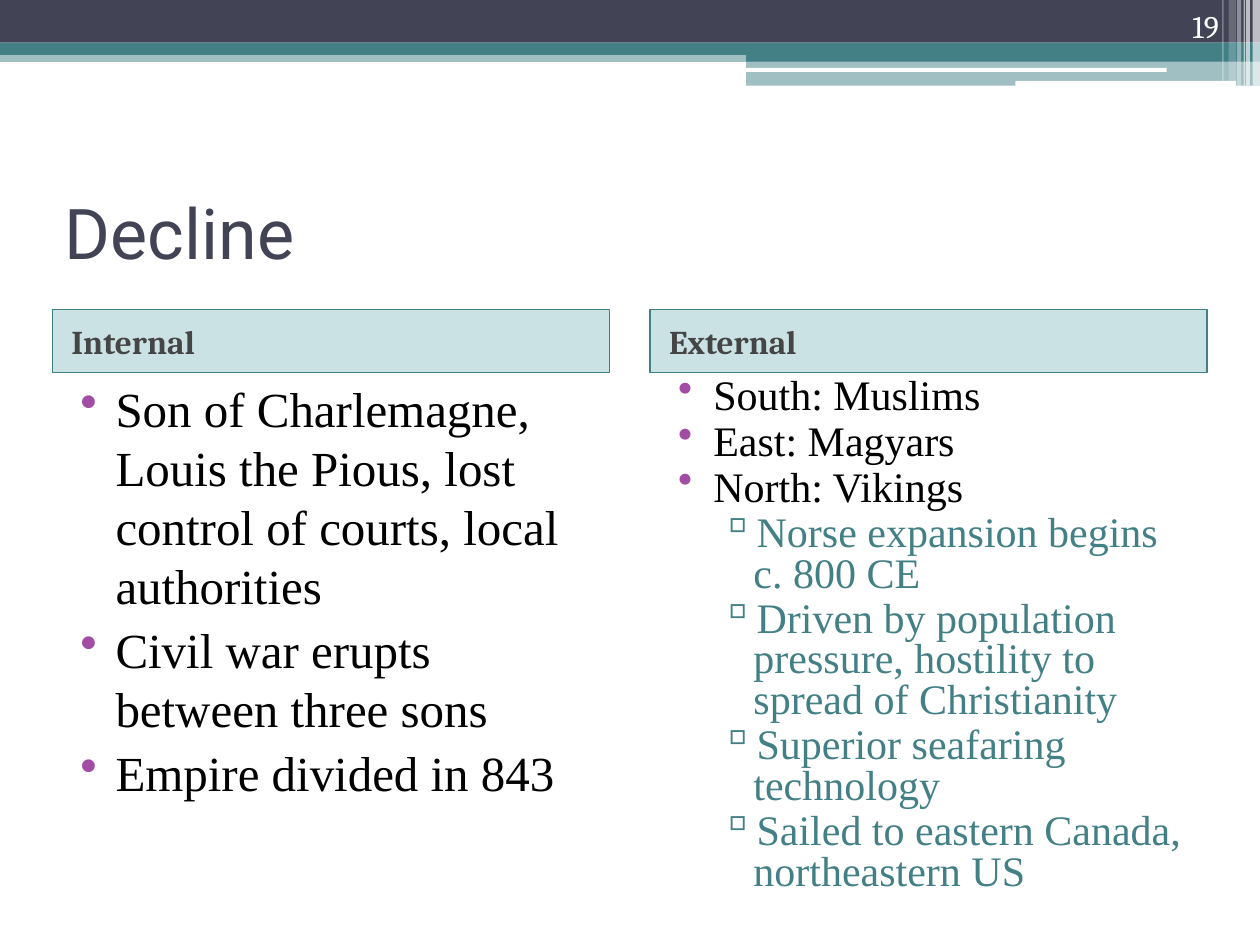
from dataclasses import dataclass

from lxml import etree
from pptx import Presentation
from pptx import util as u
from pptx.dml import color
from pptx.enum import shapes, text
from pptx.oxml import ns


@dataclass(frozen=True)
class Theme:
    navy: str = "424456"
    teal: str = "438086"
    header_fill: str = "328E97"
    header_text: str = "454545"
    purple: str = "A04DA3"
    white: str = "FFFFFF"
    black: str = "000000"
    heading_font: str = "Roboto"
    label_font: str = "Cambria"
    body_font: str = "Times New Roman"
    title_size: int = 40
    header_size: int = 19
    number_size: int = 18
    internal_size: int = 28
    external_size: int = 24


THEME = Theme()
RECT = shapes.MSO_SHAPE.RECTANGLE
ROUND = shapes.MSO_SHAPE.ROUNDED_RECTANGLE
LEVELS = (
    ("•", THEME.purple, THEME.black, 1.02, -0.71),
    ("▫", THEME.teal, THEME.teal, 1.83, -0.69),
)


def rgb(value):
    return color.RGBColor.from_string(value)


def add_bar(slide, box, fill, opacity=100, preset=RECT):
    bar = slide.shapes.add_shape(preset, *map(u.Cm, box))
    bar.shadow.inherit = False
    bar.fill.solid()
    bar.fill.fore_color.rgb = rgb(fill)
    bar.line.fill.background()
    if opacity < 100:
        tint = bar.fill._xPr.find(".//" + ns.qn("a:srgbClr"))
        etree.SubElement(tint, ns.qn("a:alpha"), val=str(opacity * 1000))
    return bar


def add_text_box(slide, box, anchor):
    holder = slide.shapes.add_textbox(*map(u.Cm, box))
    holder.text_frame.word_wrap = True
    holder.text_frame.vertical_anchor = anchor
    return holder.text_frame


def add_run(paragraph, wording, font, size, ink, bold=False):
    run = paragraph.add_run()
    run.text = wording
    run.font.name = font
    run.font.size = u.Pt(size)
    run.font.color.rgb = rgb(ink)
    run.font.bold = bold


def set_indent(paragraph, margin, hanging=0):
    properties = paragraph._p.get_or_add_pPr()
    properties.set("marL", str(u.Cm(margin)))
    properties.set("indent", str(u.Cm(hanging)))
    return properties


def set_bullet(paragraph, level):
    mark, mark_color, _, margin, hanging = LEVELS[level]
    paragraph.level = level
    properties = set_indent(paragraph, margin, hanging)
    tint = etree.SubElement(properties, ns.qn("a:buClr"))
    etree.SubElement(tint, ns.qn("a:srgbClr"), val=mark_color)
    etree.SubElement(properties, ns.qn("a:buChar"), char=mark)


def add_banner(slide, box, number):
    left, top, width, _ = box
    right = left + width
    step = left + 15.04
    step_width = right - step

    add_bar(slide, (left, top + 1.02, width, 0.23), THEME.teal, 50)
    add_bar(slide, (left, top, width, 0.86), THEME.navy)
    add_bar(slide, (left, top + 0.86, width, 0.25), THEME.teal)
    add_bar(slide, (step, top + 0.99, step_width, 0.25), THEME.teal)
    add_bar(slide, (step, top + 1.22, step_width, 0.51), THEME.teal, 50)
    add_bar(slide, (step - 0.03, top + 1.37, 8.51, 0.08), THEME.white, preset=ROUND)
    add_bar(slide, (right - 4.93, top + 1.63, 4.45, 0.1), THEME.white, preset=ROUND)

    stripes = (
        (0.15, 0.15, 1.73, 65),
        (0.28, 0.08, 1.73, 65),
        (0.33, 0.03, 1.73, 60),
        (0.46, 0.08, 1.73, 40),
        (0.63, 0.15, 1.63, 20),
        (0.76, 0.03, 1.63, 30),
    )
    for from_right, stripe_width, height, opacity in stripes:
        stripe = (right - from_right, top, stripe_width, height)
        add_bar(slide, stripe, THEME.white, opacity)

    frame = add_text_box(slide, (right - 2.69, top, 2.11, 1.02), text.MSO_ANCHOR.BOTTOM)
    page = frame.paragraphs[0]
    page.alignment = text.PP_ALIGN.RIGHT
    add_run(page, number, THEME.label_font, THEME.number_size, THEME.white)


def add_title(slide, box, wording):
    frame = add_text_box(slide, box, text.MSO_ANCHOR.MIDDLE)
    add_run(frame.paragraphs[0], wording, THEME.heading_font, THEME.title_size, THEME.navy)


def add_column(slide, box, heading, points, size, spacing=None):
    left, top, width, height = box
    header_height = 1.27

    header = add_bar(slide, (left, top, width, header_height), THEME.header_fill, 25)
    header.line.color.rgb = rgb(THEME.teal)
    header.line.width = u.Pt(1)
    header.text_frame.vertical_anchor = text.MSO_ANCHOR.MIDDLE
    label = header.text_frame.paragraphs[0]
    label.alignment = text.PP_ALIGN.LEFT
    label.space_before = u.Pt(3)
    set_indent(label, 0.13)
    add_run(label, heading, THEME.label_font, THEME.header_size, THEME.header_text, True)

    body = (left, top + header_height, width, height - header_height)
    frame = add_text_box(slide, body, text.MSO_ANCHOR.TOP)
    for index, (level, wording) in enumerate(points):
        point = frame.add_paragraph() if index else frame.paragraphs[0]
        point.space_before = u.Pt(3)
        if spacing:
            point.line_spacing = spacing
        set_bullet(point, level)
        add_run(point, wording, THEME.body_font, size, LEVELS[level][2])


def main():
    deck = Presentation()
    deck.slide_width, deck.slide_height = u.Cm(25.4), u.Cm(19.05)
    slide = deck.slides.add_slide(deck.slide_layouts[6])

    margin, column_width, column_top, column_height = 1.06, 11.23, 6.24, 12.07
    external_left = 25.4 - margin - column_width
    internal = (
        (0, "Son of Charlemagne, Louis the Pious, lost control of courts, local authorities"),
        (0, "Civil war erupts between three sons"),
        (0, "Empire divided in 843"),
    )
    external = (
        (0, "South: Muslims"),
        (0, "East: Magyars"),
        (0, "North: Vikings"),
        (1, "Norse expansion begins c. 800 CE"),
        (1, "Driven by population pressure, hostility to spread of Christianity"),
        (1, "Superior seafaring technology"),
        (1, "Sailed to eastern Canada, northeastern US"),
    )

    add_banner(slide, (0, 0, 25.4, 1.73), "19")
    add_title(slide, (margin, 3.18, 25.4 - 2 * margin, 2.96), "Decline")
    add_column(slide, (margin, column_top, column_width, column_height),
               "Internal", internal, THEME.internal_size)
    add_column(slide, (external_left, column_top, column_width, column_height),
               "External", external, THEME.external_size, 0.8)

    deck.save("out.pptx")


if __name__ == "__main__":
    main()
